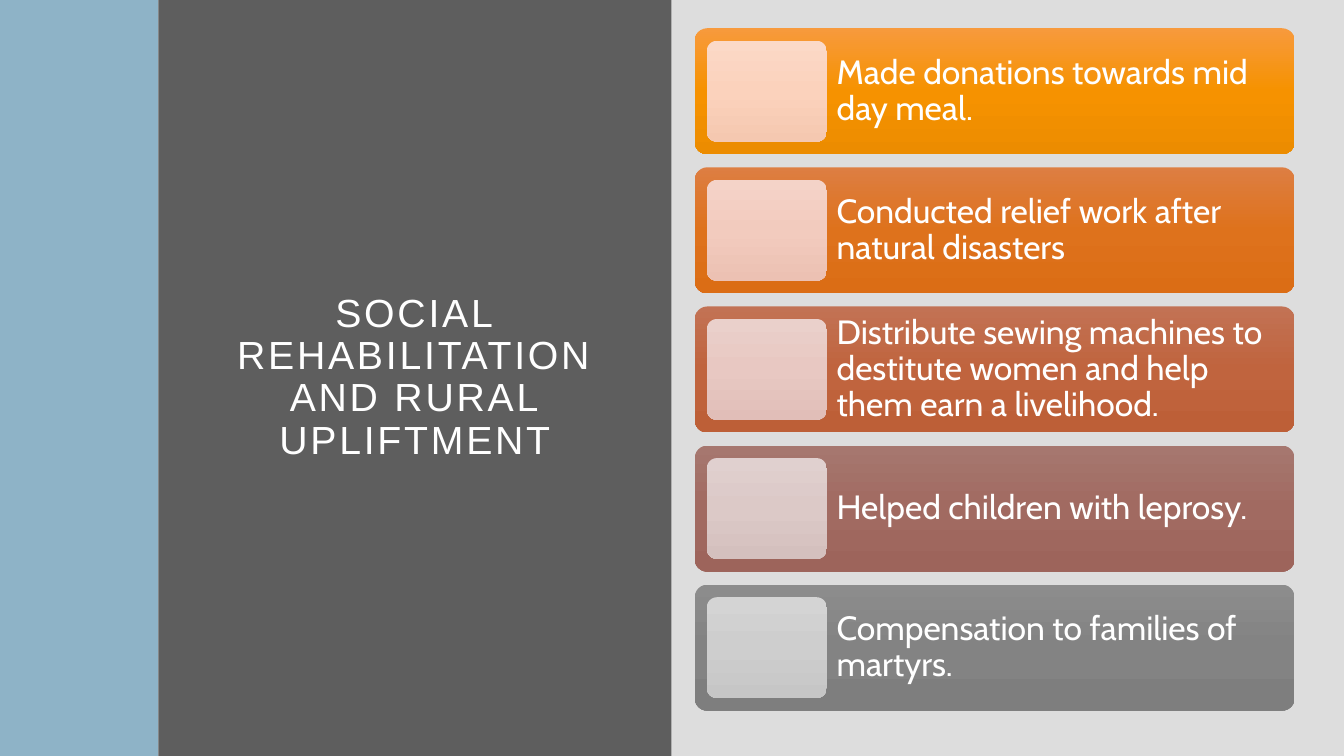
from dataclasses import dataclass

import pptx
import pptx.util
from lxml import etree
from pptx.dml.color import RGBColor
from pptx.enum.shapes import MSO_SHAPE
from pptx.enum.text import MSO_ANCHOR, PP_ALIGN
from pptx.oxml.ns import qn
from pptx.util import Inches


@dataclass(frozen=True)
class Theme:
    background: str = "DDDDDD"
    side_band: str = "418AB3"
    title_panel: str = "5E5E5E"
    text: str = "FFFFFF"
    title_font: str = "Arial"
    body_font: str = "Cabin"
    title_size: int = 28
    body_size: int = 24


THEME = Theme()
TITLE = "SOCIAL REHABILITATION AND RURAL UPLIFTMENT"

# Activity, card gradient, tile gradient
ACTIVITIES = [
    ("Made donations towards mid day meal.",
     ("F79A3D", "F69200", "EC8C00"), ("FBD9C7", "FBD2BC", "F5C8B0")),
    ("Conducted relief work after natural disasters",
     ("DD7E42", "DE721C", "DB6D15"), ("F4D3C8", "F2CBBE", "ECC1B3")),
    ("Distribute sewing machines to destitute women and help them earn a livelihood.",
     ("C27254", "C0643E", "BD5F37"), ("EAD0CB", "E8C8C2", "E1BEB8")),
    ("Helped children with leprosy.",
     ("A6776F", "A16A61", "9D645B"), ("E0D0CF", "DCC9C7", "D4C0BE")),
    ("Compensation to families of martyrs.",
     ("8C8C8C", "838383", "7E7E7E"), ("D4D4D4", "CECECE", "C6C6C6")),
]

CARD_LEFT, CARD_TOP, CARD_WIDTH, CARD_HEIGHT = 6.89, 0.28, 5.95, 1.25
CARD_PITCH = 1.38
TILE_INSET, TILE_WIDTH, TILE_HEIGHT = 0.12, 1.19, 1.0
TEXT_LEFT = CARD_LEFT + TILE_INSET + TILE_WIDTH
TEXT_WIDTH = CARD_LEFT + CARD_WIDTH - TEXT_LEFT


def add_block(shapes, kind, left, top, width, height):
    block = shapes.add_shape(kind, Inches(left), Inches(top), Inches(width), Inches(height))
    block.shadow.inherit = False
    block.line.fill.background()
    return block


def add_panel(shapes, left, width, color, opacity=100):
    panel = add_block(shapes, MSO_SHAPE.RECTANGLE, left, 0, width, 7.5)
    panel.fill.solid()
    panel.fill.fore_color.rgb = RGBColor.from_string(color)
    if opacity < 100:
        rgb = panel.fill._xPr.find(f".//{qn('a:srgbClr')}")
        etree.SubElement(rgb, qn("a:alpha"), val=str(opacity * 1000))


def add_gradient_card(shapes, left, top, width, height, colors):
    card = add_block(shapes, MSO_SHAPE.ROUNDED_RECTANGLE, left, top, width, height)
    card.adjustments[0] = 0.1
    card.fill.gradient()
    card.fill.gradient_angle = 270
    # Three evenly spaced stops, top to bottom
    stops = card.fill._xPr.find(f".//{qn('a:gsLst')}")
    for stop in list(stops):
        stops.remove(stop)
    for position, color in zip((0, 50000, 100000), colors):
        stop = etree.SubElement(stops, qn("a:gs"), pos=str(position))
        etree.SubElement(stop, qn("a:srgbClr"), val=color)


def add_text(shapes, left, top, width, height, text, font, size, inset,
             align=PP_ALIGN.LEFT, spacing=0):
    box = shapes.add_textbox(Inches(left), Inches(top), Inches(width), Inches(height))
    frame = box.text_frame
    frame.word_wrap = True
    frame.vertical_anchor = MSO_ANCHOR.MIDDLE
    frame.margin_left = frame.margin_right = Inches(inset)
    frame.margin_top = frame.margin_bottom = Inches(inset)
    paragraph = frame.paragraphs[0]
    paragraph.alignment = align
    paragraph.line_spacing = 0.9
    run = paragraph.add_run()
    run.text = text
    run.font.name = font
    run.font.size = pptx.util.Pt(size)
    run.font.color.rgb = RGBColor.from_string(THEME.text)
    if spacing:
        run.font._element.set("spc", str(spacing * 100))


def add_activity(shapes, top, activity, card_colors, tile_colors):
    add_gradient_card(shapes, CARD_LEFT, top, CARD_WIDTH, CARD_HEIGHT, card_colors)
    add_text(shapes, TEXT_LEFT, top, TEXT_WIDTH, CARD_HEIGHT, activity,
             THEME.body_font, THEME.body_size, 0.1)
    add_gradient_card(shapes, CARD_LEFT + TILE_INSET, top + (CARD_HEIGHT - TILE_HEIGHT) / 2,
                      TILE_WIDTH, TILE_HEIGHT, tile_colors)


def main():
    deck = pptx.Presentation()
    deck.slide_width, deck.slide_height = Inches(13.33), Inches(7.5)
    slide = deck.slides.add_slide(deck.slide_layouts[6])
    slide.background.fill.solid()
    slide.background.fill.fore_color.rgb = RGBColor.from_string(THEME.background)

    # Side band and title panel
    add_panel(slide.shapes, 0, 1.57, THEME.side_band, opacity=50)
    add_panel(slide.shapes, 1.57, 5.09, THEME.title_panel)
    add_text(slide.shapes, 2.13, 1.16, 3.97, 5.18, TITLE, THEME.title_font,
             THEME.title_size, 0.2, PP_ALIGN.CENTER, spacing=2)

    # Activity list
    activity_list = slide.shapes.add_group_shape()
    for row, (activity, card_colors, tile_colors) in enumerate(ACTIVITIES):
        add_activity(activity_list.shapes, CARD_TOP + row * CARD_PITCH,
                     activity, card_colors, tile_colors)

    deck.save("out.pptx")


if __name__ == "__main__":
    main()
